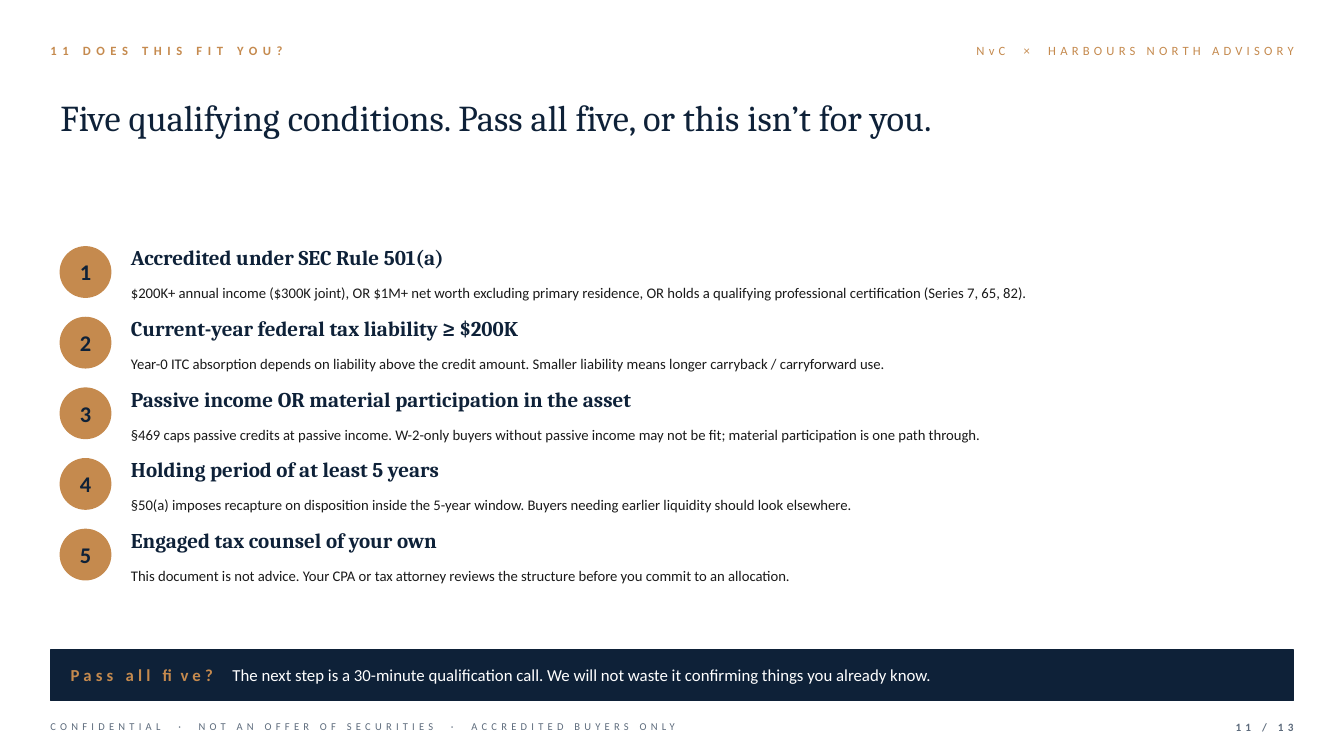
from pptx import Presentation
from pptx.dml.color import RGBColor
from pptx.enum.shapes import MSO_SHAPE
from pptx.enum.text import MSO_ANCHOR, PP_ALIGN
from pptx.util import Cm, Pt

OVAL, BAR = MSO_SHAPE.OVAL, MSO_SHAPE.RECTANGLE
TOP, MIDDLE = MSO_ANCHOR.TOP, MSO_ANCHOR.MIDDLE
LEFT, CENTER, RIGHT = PP_ALIGN.LEFT, PP_ALIGN.CENTER, PP_ALIGN.RIGHT

COLORS = {
    "copper": "C58A4E",
    "navy": "0E2138",
    "ink": "1A1A1A",
    "slate": "5D6B7C",
    "white": "FFFFFF",
}

SECTION = {"name": "Calibri", "size": 9, "color": "copper", "bold": True, "spacing": 4}
PARTNERS = {"name": "Calibri", "size": 9, "color": "copper", "spacing": 3}
TITLE = {"name": "Cambria", "size": 26, "color": "navy"}
NUMBER = {"name": "Calibri", "size": 16, "color": "navy", "bold": True}
HEADING = {"name": "Cambria", "size": 15, "color": "navy", "bold": True}
DETAIL = {"name": "Calibri", "size": 10.5, "color": "ink"}
QUESTION = {"name": "Calibri", "size": 12, "color": "copper", "bold": True, "spacing": 3}
NEXT_STEP = {"name": "Calibri", "size": 12, "color": "white", "bold": False}
DISCLAIMER = {"name": "Calibri", "size": 7.5, "color": "slate", "spacing": 3}
PAGE = {"name": "Calibri", "size": 8, "color": "slate", "bold": True, "spacing": 3}

CONDITIONS = [
    ("Accredited under SEC Rule 501(a)",
     "$200K+ annual income ($300K joint), OR $1M+ net worth excluding primary residence, "
     "OR holds a qualifying professional certification (Series 7, 65, 82)."),
    ("Current-year federal tax liability ≥ $200K",
     "Year-0 ITC absorption depends on liability above the credit amount. "
     "Smaller liability means longer carryback / carryforward use."),
    ("Passive income OR material participation in the asset",
     "§469 caps passive credits at passive income. W-2-only buyers without passive income "
     "may not be fit; material participation is one path through."),
    ("Holding period of at least 5 years",
     "§50(a) imposes recapture on disposition inside the 5-year window. "
     "Buyers needing earlier liquidity should look elsewhere."),
    ("Engaged tax counsel of your own",
     "This document is not advice. Your CPA or tax attorney reviews the structure "
     "before you commit to an allocation."),
]

MARGIN = 1.27
CONTENT_WIDTH = 31.32
INDENT = 1.52
TEXT_LEFT = 3.3
TEXT_WIDTH = 29.29
FIRST_ROW = 6.22
ROW_PITCH = 1.78
BADGE = 1.27


def rgb(color):
    return RGBColor.from_string(COLORS[color])


def add_run(paragraph, text, style):
    run = paragraph.add_run()
    run.text = text
    for key, value in style.items():
        if key == "color":
            run.font.color.rgb = rgb(value)
        elif key == "spacing":
            run._r.get_or_add_rPr().set("spc", str(round(value * 100)))
        else:
            setattr(run.font, key, Pt(value) if key == "size" else value)


def spread(parts, style):
    """Separate the parts by single spaces with extra letter spacing."""
    gap = {**style, "spacing": 8}
    runs = [(parts[0], style)]
    for part in parts[1:]:
        runs += [(" ", gap), (part, style)]
    return runs


def write(shape, runs, align=LEFT, anchor=MIDDLE, line_spacing=None, inset=0):
    frame = shape.text_frame
    layout = {"word_wrap": True, "vertical_anchor": anchor, "margin_left": Cm(inset),
              "margin_right": Cm(inset), "margin_top": 0, "margin_bottom": 0}
    for key, value in layout.items():
        setattr(frame, key, value)
    paragraph = frame.paragraphs[0]
    paragraph.alignment = align
    paragraph.line_spacing = line_spacing
    for text, style in runs:
        add_run(paragraph, text, style)


def add_label(slide, box, runs, **layout):
    write(slide.shapes.add_textbox(*map(Cm, box)), runs, **layout)


def add_filled(slide, kind, box, color, runs, **layout):
    shape = slide.shapes.add_shape(kind, *map(Cm, box))
    shape.shadow.inherit = False
    shape.fill.solid()
    shape.fill.fore_color.rgb = rgb(color)
    shape.line.color.rgb = rgb(color)
    shape.line.width = Pt(1)
    write(shape, runs, **layout)


def add_condition(slide, number, heading, detail):
    top = FIRST_ROW + (number - 1) * ROW_PITCH
    add_filled(slide, OVAL, (INDENT, top, BADGE, BADGE), "copper",
               [(str(number), NUMBER)], align=CENTER)
    add_label(slide, (TEXT_LEFT, top - 0.05, TEXT_WIDTH, 1.02),
              [(heading, HEADING)], anchor=TOP)
    add_label(slide, (TEXT_LEFT, top + 0.81, TEXT_WIDTH, 1.02),
              [(detail, DETAIL)], anchor=TOP, line_spacing=1.3)


def main():
    deck = Presentation()
    deck.slide_width, deck.slide_height = Cm(33.86), Cm(19.05)
    slide = deck.slides.add_slide(deck.slide_layouts[6])

    add_label(slide, (MARGIN, 0.89, 19.05, 0.76), [("11 DOES THIS FIT YOU?", SECTION)])
    add_label(slide, (19.05, 0.89, 13.54, 0.76),
              spread(["NvC", "×", "HARBOURS NORTH ADVISORY"], PARTNERS), align=RIGHT)
    add_label(slide, (INDENT, 2.41, 30.81, 3.05),
              [("Five qualifying conditions. Pass all five, or this isn’t for you.", TITLE)],
              anchor=TOP)

    for number, (heading, detail) in enumerate(CONDITIONS, 1):
        add_condition(slide, number, heading, detail)

    call_to_action = [
        ("Pass all five?", QUESTION),
        (" ", {**QUESTION, "spacing": 8}),
        ("The next step is a 30-minute qualification call. "
         "We will not waste it confirming things you already know.", NEXT_STEP),
    ]
    add_filled(slide, BAR, (MARGIN, 16.38, CONTENT_WIDTH, 1.27), "navy",
               call_to_action, inset=0.51)

    disclaimer = ["CONFIDENTIAL", "·", "NOT AN OFFER OF SECURITIES", "·",
                  "ACCREDITED BUYERS ONLY"]
    add_label(slide, (MARGIN, 18.03, 24.13, 0.56), spread(disclaimer, DISCLAIMER))
    add_label(slide, (30.3, 18.03, 2.29, 0.56), [("11 / 13", PAGE)], align=RIGHT)

    deck.save("out.pptx")


if __name__ == "__main__":
    main()
